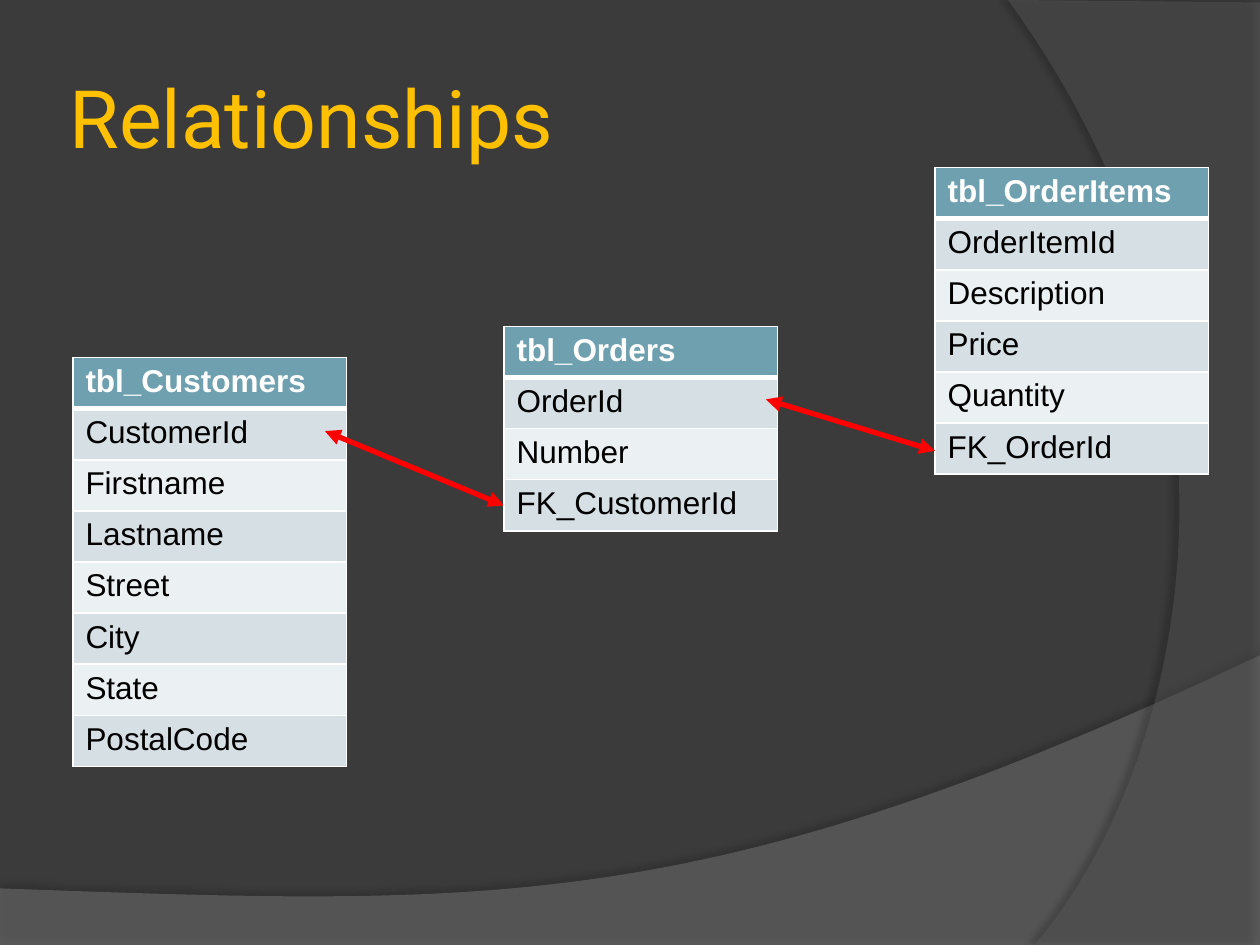
from pptx import Presentation
from pptx import util as u
from pptx.dml.color import RGBColor
from pptx.enum import shapes, text
from pptx.oxml import parse_xml
from pptx.oxml.ns import nsdecls, qn

HUES = {
    "back": "3B3B3B", "wave": "7F7F7F", "arc": "5E5E5E", "title": "FFC000",
    "head": "6EA0B0", "odd": "D5DFE4", "even": "EBF0F2",
    "white": "FFFFFF", "black": "000000", "link": "FF0000",
}
WIDE, TALL = 25.4, 19.05
COL, ROW = 5.51, 1.03
TABLES = {
    "tbl_Customers": (1.47, 7.21, ["CustomerId", "Firstname", "Lastname", "Street",
                                   "City", "State", "PostalCode"]),
    "tbl_Orders": (10.16, 6.58, ["OrderId", "Number", "FK_CustomerId"]),
    "tbl_OrderItems": (18.85, 3.38, ["OrderItemId", "Description", "Price",
                                     "Quantity", "FK_OrderId"]),
}


def rgb(name):
    return RGBColor.from_string(HUES[name])


def xml(tag, rest):
    return parse_xml(f"<a:{tag} {nsdecls('a')} {rest}")


def solid(name):
    return f'<a:solidFill><a:srgbClr val="{HUES[name]}"/></a:solidFill>'


def style(par, size, font, hue, bold=False):
    for run in par.runs:
        run.font.size, run.font.name, run.font.bold = u.Pt(size), font, bold
        run.font.color.rgb = rgb(hue)


def curve(a, b, c, d, steps=60):
    """Points along a cubic Bezier from a to d."""
    points = []
    for i in range(steps + 1):
        t = i / steps
        parts = ((1 - t) ** 3, 3 * t * (1 - t) ** 2, 3 * t * t * (1 - t), t ** 3)
        points.append(tuple(sum(w * p[k] for w, p in zip(parts, (a, b, c, d)))
                            for k in (0, 1)))
    return points


def add_sweep(slide, points, hue, alpha, shade, dist, angle):
    """Draw a see-through backdrop outline with a soft shadow."""
    pen = slide.shapes.build_freeform(*[u.Cm(v) for v in points[0]])
    pen.add_line_segments([(u.Cm(x), u.Cm(y)) for x, y in points[1:]], close=True)
    shape = pen.convert_to_shape()
    shape.fill.solid()
    shape.fill.fore_color.rgb = rgb(hue)
    props = shape._element.spPr
    props.find(".//" + qn("a:srgbClr")).append(xml("alpha", f'val="{alpha * 1000}"/>'))
    shape.line.fill.background()
    props.append(xml("effectLst", f'''><a:outerShdw blurRad="{u.Pt(4)}"
        dist="{u.Pt(dist)}" dir="{angle * 60000}" algn="ctr" rotWithShape="0">
        <a:srgbClr val="{HUES['black']}"><a:alpha val="{shade * 1000}"/></a:srgbClr>
        </a:outerShdw></a:effectLst>'''))


def add_title(slide, words):
    title = slide.shapes.title
    slide.shapes._spTree.append(title._element)
    title.left, title.top = u.Cm(1.27), u.Cm(0.76)
    title.width, title.height = u.Cm(20.75), u.Cm(3.18)
    frame = title.text_frame
    frame.text = words
    frame.vertical_anchor = text.MSO_ANCHOR.MIDDLE
    frame.margin_left = frame.margin_right = u.Cm(0.13)
    frame.margin_top = frame.margin_bottom = u.Cm(0.13)
    par = frame.paragraphs[0]
    par.alignment = text.PP_ALIGN.LEFT
    style(par, 46, "Roboto", "title")
    edge = xml("ln", f'w="{u.Pt(0.39)}">{solid("title")}</a:ln>')
    par.runs[0].font._element.insert(0, edge)


def add_table(slide, name):
    left, top, fields = TABLES[name]
    rows = [name] + fields
    grid = slide.shapes.add_table(len(rows), 1, u.Cm(left), u.Cm(top), u.Cm(COL),
                                  u.Cm(ROW * len(rows))).table
    for i, word in enumerate(rows):
        grid.rows[i].height = u.Cm(ROW)
        cell = grid.cell(i, 0)
        cell.text = word
        style(cell.text_frame.paragraphs[0], 18, "Arial",
              "black" if i else "white", bold=i == 0)
        props = cell._tc.get_or_add_tcPr()
        for side in "LRTB":
            thick = (i, side) in ((0, "B"), (1, "T"))
            props.append(xml(f"ln{side}", f'w="{u.Pt(3 if thick else 1)}">'
                             f'{solid("white")}</a:ln{side}>'))
        cell.fill.solid()
        cell.fill.fore_color.rgb = rgb("head" if i == 0 else "odd" if i % 2 else "even")


def add_link(slide, *ends):
    line = slide.shapes.add_connector(shapes.MSO_CONNECTOR.STRAIGHT,
                                      *[u.Cm(v) for v in ends])
    line.line.color.rgb = rgb("link")
    line.line.width = u.Pt(3)
    pen = line.line._get_or_add_ln()
    for end in ("headEnd", "tailEnd"):
        pen.append(xml(end, 'type="triangle"/>'))
    line._element.spPr.append(xml("effectLst", "/>"))


def main():
    deck = Presentation()
    deck.slide_width, deck.slide_height = u.Cm(WIDE), u.Cm(TALL)
    slide = deck.slides.add_slide(deck.slide_layouts[5])
    slide.background.fill.solid()
    slide.background.fill.fore_color.rgb = rgb("back")

    wave = curve((WIDE, 13.21), (14.2, 18.52), (9.93, 18.26), (0, 17.91))
    add_sweep(slide, [(0, TALL), (WIDE, TALL)] + wave, "wave", 45, 35, 3.5, 270)
    arc = curve((20.85, TALL), (23.75, 15.72), (25.86, 7.62), (20.32, 0))
    add_sweep(slide, [(WIDE, 0.05), (WIDE, TALL)] + arc, "arc", 40, 45, 4, 180)

    add_title(slide, "Relationships")
    add_table(slide, "tbl_Customers")
    add_link(slide, 6.55, 8.69, 10.16, 10.19)
    add_table(slide, "tbl_Orders")
    add_table(slide, "tbl_OrderItems")
    add_link(slide, 15.44, 8.05, 18.85, 9.09)
    deck.save("out.pptx")


if __name__ == "__main__":
    main()
